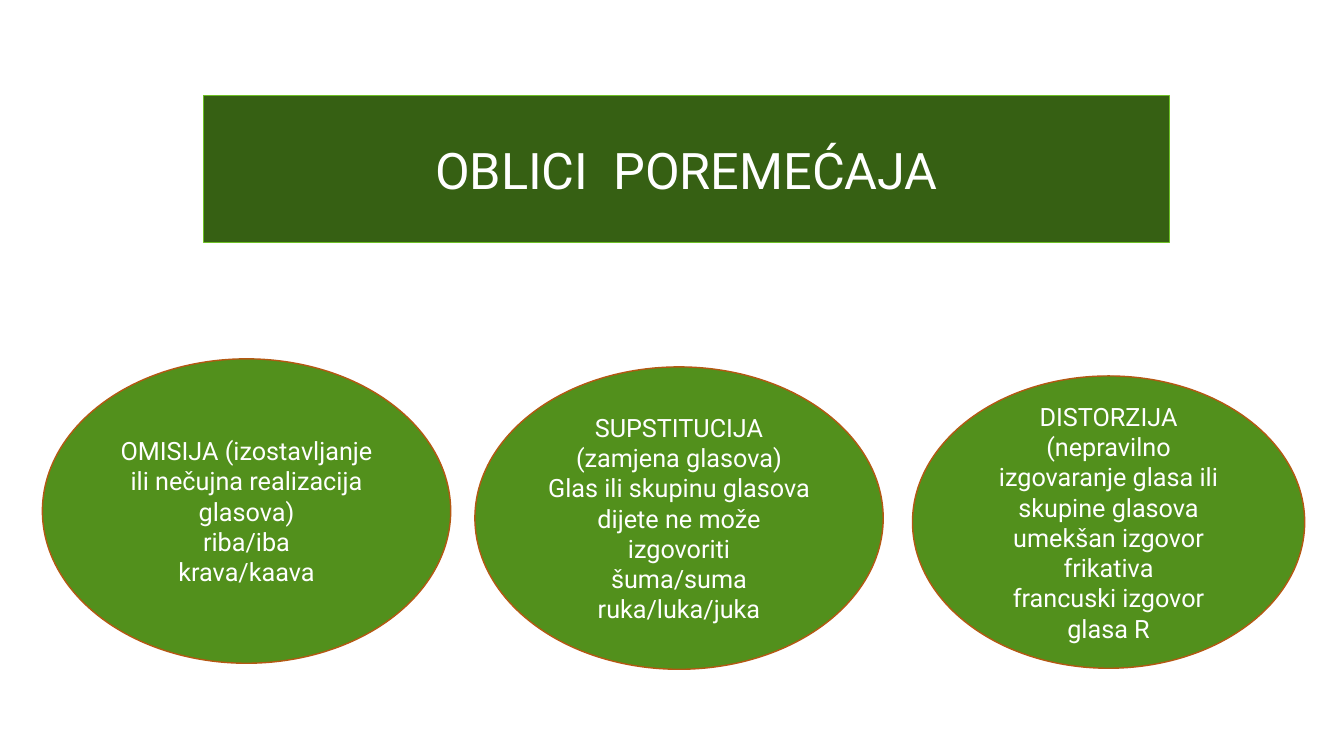
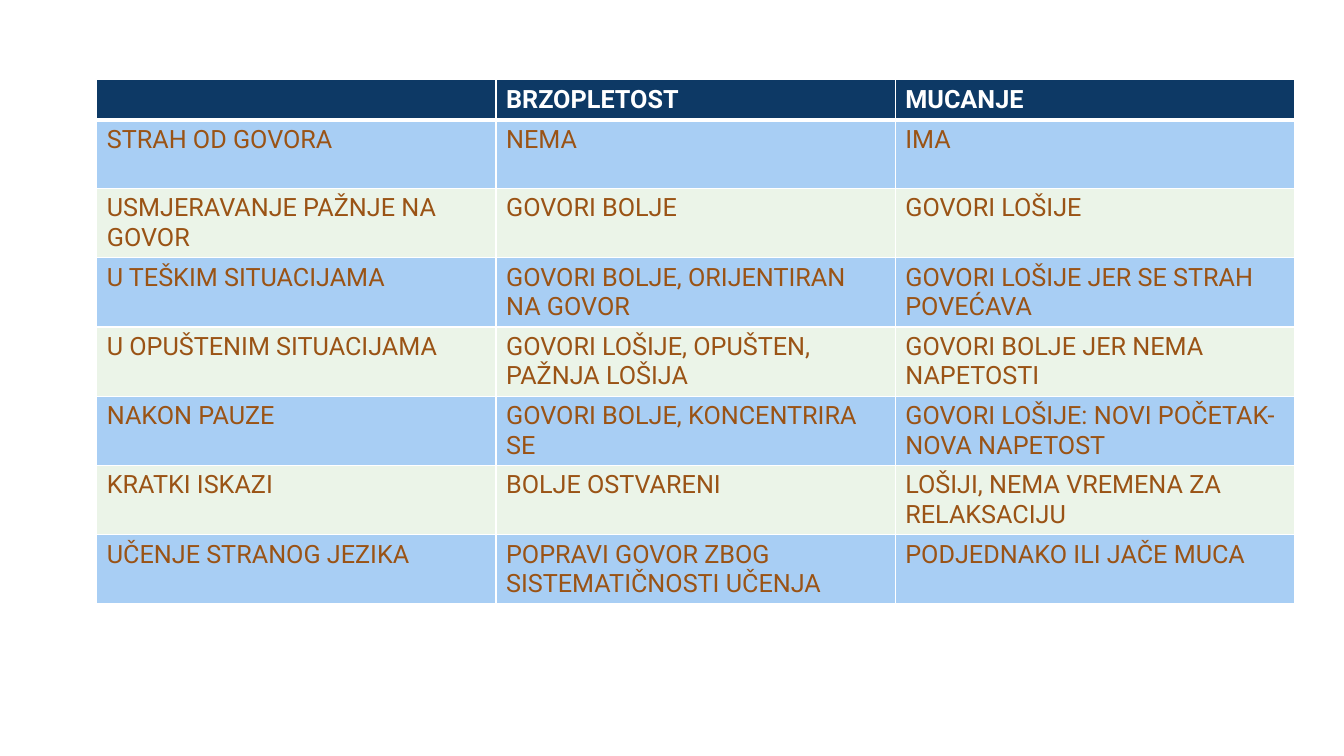
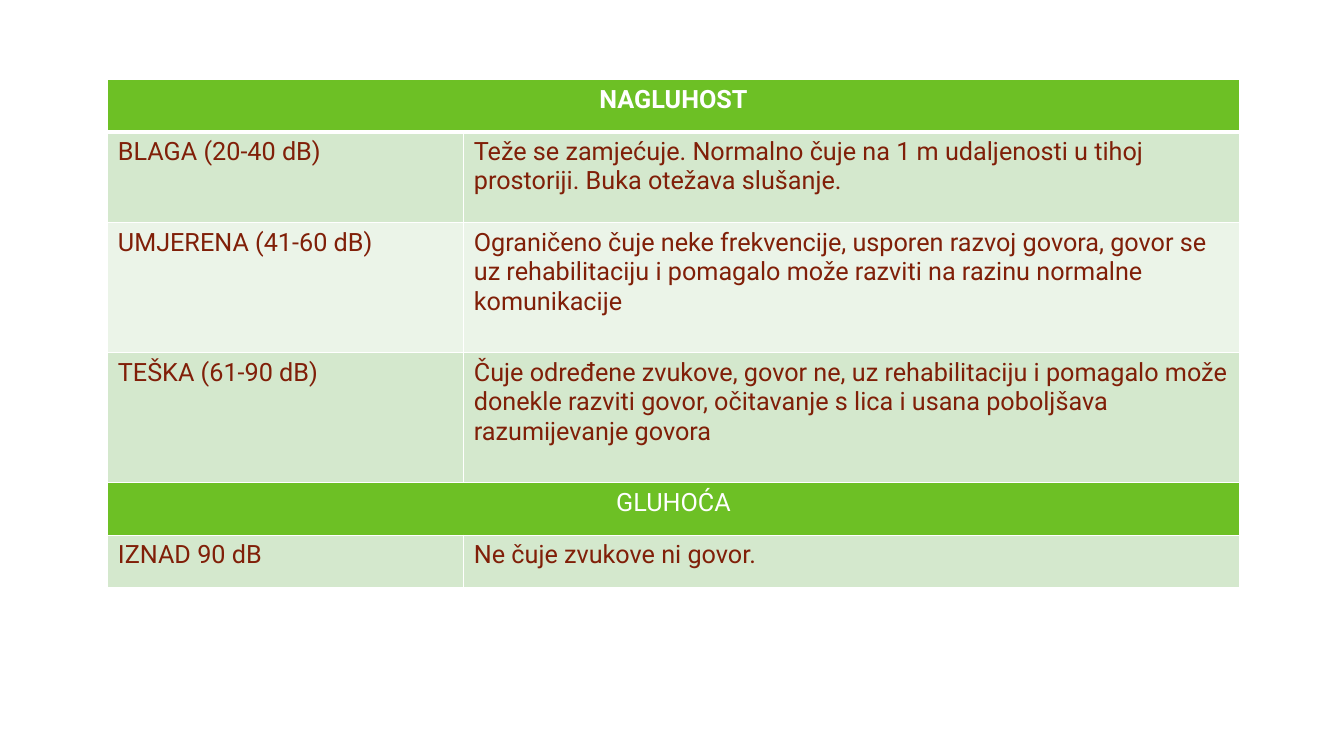
"""Build three slides on speech disorders, cluttering versus stuttering, and hearing loss."""
from lxml import etree
from pptx import Presentation
from pptx.dml.color import RGBColor
from pptx.enum.shapes import MSO_SHAPE
from pptx.enum.text import MSO_ANCHOR, PP_ALIGN
from pptx.oxml.ns import qn
from pptx.util import Inches, Pt

OVAL, RECTANGLE = MSO_SHAPE.OVAL, MSO_SHAPE.RECTANGLE
MIDDLE = MSO_ANCHOR.MIDDLE
CENTER, LEFT = PP_ALIGN.CENTER, PP_ALIGN.LEFT

FONT = "Roboto"
BODY_SIZE, TITLE_SIZE = 18, 36
WHITE = RGBColor(0xFF, 0xFF, 0xFF)
FOREST = RGBColor(0x36, 0x60, 0x13)
GREEN = RGBColor(0x52, 0x90, 0x1C)
LIME = RGBColor(0x6D, 0xC0, 0x25)
RUST = RGBColor(0xB4, 0x58, 0x13)
NAVY = RGBColor(0x0D, 0x39, 0x65)
SKY = RGBColor(0xA8, 0xCE, 0xF4)
MINT = RGBColor(0xEB, 0xF4, 0xE8)
SAGE = RGBColor(0xD4, 0xE8, 0xCD)
BROWN = RGBColor(0x9A, 0x53, 0x15)
MAROON = RGBColor(0x80, 0x1F, 0x08)
HEADING_FILLS = (NAVY, LIME)
TABLE_TOP = 0.79


def add_panel(slide, kind, box, fill, outline, outline_width, lines, size):
    panel = slide.shapes.add_shape(kind, *[Inches(length) for length in box])
    panel.shadow.inherit = False
    panel.fill.solid()
    panel.fill.fore_color.rgb = fill
    panel.line.color.rgb = outline
    panel.line.width = Pt(outline_width)
    frame = panel.text_frame
    frame.word_wrap = True
    frame.vertical_anchor = MIDDLE
    frame.text = "\n".join(lines)
    for paragraph in frame.paragraphs:
        paragraph.alignment = CENTER
        paragraph.font.name = FONT
        paragraph.font.size = Pt(size)
        paragraph.font.color.rgb = WHITE


def add_grid(slide, left, widths, heights, rows, fills, text_color):
    grid = slide.shapes.add_table(
        len(rows), len(widths), Inches(left), Inches(TABLE_TOP),
        Inches(sum(widths)), Inches(sum(heights))).table
    for column, width in zip(grid.columns, widths):
        column.width = Inches(width)
    for index, (texts, height, fill) in enumerate(zip(rows, heights, fills)):
        grid.rows[index].height = Inches(height)
        spans_row = len(texts) == 1
        for position in range(len(widths)):
            cell = grid.cell(index, position)
            properties = cell._tc.get_or_add_tcPr()
            edges = {"a:lnL": 1, "a:lnR": 1,
                     "a:lnT": 3 if index == 1 else 1,
                     "a:lnB": 3 if index == 0 else 1}
            for edge, points in edges.items():
                border = etree.SubElement(properties, qn(edge), w=str(Pt(points)))
                paint = etree.SubElement(border, qn("a:solidFill"))
                etree.SubElement(paint, qn("a:srgbClr"), val=str(WHITE))
            cell.fill.solid()
            cell.fill.fore_color.rgb = fill
        if spans_row:
            grid.cell(index, 0).merge(grid.cell(index, len(widths) - 1))
        for position, text in enumerate(texts):
            cell = grid.cell(index, position)
            cell.text = text
            paragraph = cell.text_frame.paragraphs[0]
            paragraph.alignment = CENTER if spans_row else LEFT
            paragraph.font.name = FONT
            paragraph.font.size = Pt(BODY_SIZE)
            paragraph.font.bold = index == 0
            paragraph.font.color.rgb = WHITE if fill in HEADING_FILLS else text_color


deck = Presentation()
deck.slide_width, deck.slide_height = Inches(13.33), Inches(7.5)
blank = deck.slide_layouts[6]

disorders = deck.slides.add_slide(blank)
add_panel(disorders, RECTANGLE, (2.02, 0.95, 9.58, 1.45), FOREST, LIME, 0.5,
          ["OBLICI  POREMEĆAJA"], TITLE_SIZE)
disorder_forms = [
    ((0.42, 3.56, 4.05, 3.02),
     ["OMISIJA (izostavljanje ili nečujna realizacija glasova)",
      "riba/iba", "krava/kaava"]),
    ((4.71, 3.64, 4.05, 3),
     ["SUPSTITUCIJA (zamjena glasova)",
      "Glas ili skupinu glasova dijete ne može izgovoriti",
      "šuma/suma", "ruka/luka/juka"]),
    ((9.05, 3.73, 3.89, 2.9),
     ["DISTORZIJA (nepravilno izgovaranje glasa ili skupine glasova",
      "umekšan izgovor frikativa", "francuski izgovor glasa R"]),
]
for box, lines in disorder_forms:
    add_panel(disorders, OVAL, box, GREEN, RUST, 1, lines, BODY_SIZE)

fluency = deck.slides.add_slide(blank)
fluency_rows = [
    ("", "BRZOPLETOST", "MUCANJE"),
    ("STRAH OD GOVORA", "NEMA", "IMA"),
    ("USMJERAVANJE PAŽNJE NA GOVOR", "GOVORI BOLJE", "GOVORI LOŠIJE"),
    ("U TEŠKIM SITUACIJAMA", "GOVORI BOLJE, ORIJENTIRAN NA GOVOR",
     "GOVORI LOŠIJE JER SE STRAH POVEĆAVA"),
    ("U OPUŠTENIM SITUACIJAMA", "GOVORI LOŠIJE, OPUŠTEN, PAŽNJA LOŠIJA",
     "GOVORI BOLJE JER NEMA NAPETOSTI"),
    ("NAKON PAUZE", "GOVORI BOLJE, KONCENTRIRA SE",
     "GOVORI LOŠIJE: NOVI POČETAK-NOVA NAPETOST"),
    ("KRATKI ISKAZI", "BOLJE OSTVARENI", "LOŠIJI, NEMA VREMENA ZA RELAKSACIJU"),
    ("UČENJE STRANOG JEZIKA", "POPRAVI GOVOR ZBOG SISTEMATIČNOSTI UČENJA",
     "PODJEDNAKO ILI JAČE MUCA"),
]
add_grid(fluency, 0.96, [3.96] * 3, [0.4] + [0.68] * 7, fluency_rows,
         [NAVY] + [SKY, MINT] * 3 + [SKY], BROWN)

hearing = deck.slides.add_slide(blank)
hearing_rows = [
    ("NAGLUHOST",),
    ("BLAGA (20-40 dB)",
     "Teže se zamjećuje. Normalno čuje na 1 m udaljenosti u tihoj prostoriji. "
     "Buka otežava slušanje."),
    ("UMJERENA (41-60 dB)",
     "Ograničeno čuje neke frekvencije, usporen razvoj govora, govor se uz "
     "rehabilitaciju i pomagalo može razviti na razinu normalne komunikacije"),
    ("TEŠKA (61-90 dB)",
     "Čuje određene zvukove, govor ne, uz rehabilitaciju i pomagalo može donekle "
     "razviti govor, očitavanje s lica i usana poboljšava razumijevanje govora"),
    ("GLUHOĆA",),
    ("IZNAD 90 dB", "Ne čuje zvukove ni govor."),
]
add_grid(hearing, 1.07, [3.53, 7.69], [0.52, 0.9, 1.29, 1.29, 0.52, 0.52],
         hearing_rows, [LIME, SAGE, MINT, SAGE, LIME, SAGE], MAROON)

deck.save("out.pptx")
